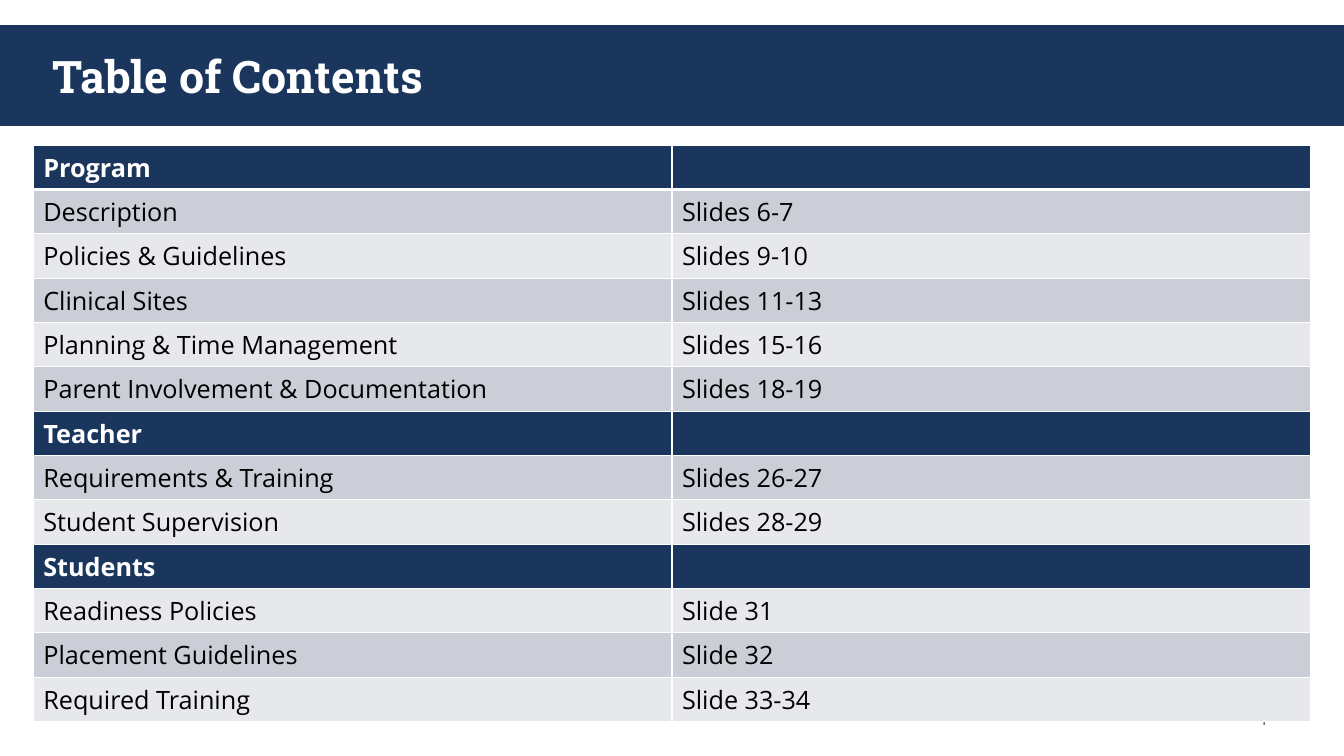
from dataclasses import dataclass
from typing import Any

import pptx
import pptx.dml.color
import pptx.enum.shapes
import pptx.enum.text
import pptx.oxml
import pptx.oxml.ns
import pptx.util

Inches = pptx.util.Inches
Align = pptx.enum.text.PP_ALIGN
Anchor = pptx.enum.text.MSO_ANCHOR


@dataclass(frozen=True)
class Theme:
    navy: str = "1B365D"
    white: str = "FFFFFF"
    black: str = "000000"
    gray: str = "6E7073"
    dark_band: str = "CBCDD7"
    light_band: str = "E7E8EC"
    heading_font: str = "Roboto Slab"
    body_font: str = "Open Sans"
    title_size: int = 32
    body_size: int = 18
    number_size: int = 14
    header_rule: int = 3


@dataclass(frozen=True)
class Frame:
    left: float
    top: float
    width: float
    height: float

    def lengths(self) -> tuple[int, ...]:
        return tuple(Inches(value) for value in (self.left, self.top, self.width, self.height))


@dataclass(frozen=True)
class TextStyle:
    name: str
    size: int
    color: str
    bold: bool = False


@dataclass(frozen=True)
class Label:
    text: str
    frame: Frame
    style: TextStyle
    align: Any = Align.LEFT
    anchor: Any = Anchor.TOP


@dataclass(frozen=True)
class Entry:
    topic: str
    slides: str = ""

    @property
    def is_section(self) -> bool:
        return not self.slides


THEME = Theme()
TITLE_STYLE = TextStyle(THEME.heading_font, THEME.title_size, THEME.white, True)
NUMBER_STYLE = TextStyle(THEME.body_font, THEME.number_size, THEME.gray)
SECTION_STYLE = TextStyle(THEME.body_font, THEME.body_size, THEME.white, True)
ENTRY_STYLE = TextStyle(THEME.body_font, THEME.body_size, THEME.black)

BANNER = Frame(0, 0.25, 13.33, 1)
LABELS = [
    Label("4", Frame(12, 6.95, 0.67, 0.4), NUMBER_STYLE, align=Align.RIGHT),
    Label("Table of Contents", Frame(0.42, 0.25, 12.11, 1), TITLE_STYLE, anchor=Anchor.MIDDLE),
]
ENTRIES = [
    Entry("Program"),
    Entry("Description", "Slides 6-7"),
    Entry("Policies & Guidelines", "Slides 9-10"),
    Entry("Clinical Sites", "Slides 11-13"),
    Entry("Planning & Time Management", "Slides 15-16"),
    Entry("Parent Involvement & Documentation", "Slides 18-19"),
    Entry("Teacher"),
    Entry("Requirements & Training", "Slides 26-27"),
    Entry("Student Supervision", "Slides 28-29"),
    Entry("Students"),
    Entry("Readiness Policies", "Slide 31"),
    Entry("Placement Guidelines", "Slide 32"),
    Entry("Required Training", "Slide 33-34"),
]
ROW_HEIGHT = 0.44
CONTENTS = Frame(0.33, 1.44, 12.67, ROW_HEIGHT * len(ENTRIES))


def rgb(value: str) -> pptx.dml.color.RGBColor:
    return pptx.dml.color.RGBColor.from_string(value)


def paint(fill: Any, color: str) -> None:
    fill.solid()
    fill.fore_color.rgb = rgb(color)


def write(para: Any, text: str, style: TextStyle) -> None:
    span = para.add_run()
    span.text = text
    formats = {"name": style.name, "size": pptx.util.Pt(style.size), "bold": style.bold}
    for attribute, value in formats.items():
        setattr(span.font, attribute, value)
    span.font.color.rgb = rgb(style.color)


def rule_below(cell: Any, color: str, points: int) -> None:
    border = pptx.oxml.parse_xml(
        f'<a:lnB {pptx.oxml.ns.nsdecls("a")} w="{pptx.util.Pt(points)}">'
        f'<a:solidFill><a:srgbClr val="{color}"/></a:solidFill></a:lnB>'
    )
    cell._tc.get_or_add_tcPr().insert(0, border)


def draw_banner(page: Any, frame: Frame) -> None:
    rectangle = pptx.enum.shapes.MSO_SHAPE.RECTANGLE
    banner = page.shapes.add_shape(rectangle, *frame.lengths())
    banner.shadow.inherit = False
    paint(banner.fill, THEME.navy)
    banner.line.fill.background()


def draw_label(page: Any, label: Label) -> None:
    box = page.shapes.add_textbox(*label.frame.lengths())
    formats = {"word_wrap": True, "vertical_anchor": label.anchor}
    for attribute, value in formats.items():
        setattr(box.text_frame, attribute, value)
    para = box.text_frame.paragraphs[0]
    para.alignment = label.align
    write(para, label.text, label.style)


def draw_contents(page: Any, frame: Frame, entries: list[Entry]) -> None:
    table = page.shapes.add_table(len(entries), 2, *frame.lengths()).table
    bands = (THEME.light_band, THEME.dark_band)
    for index, entry in enumerate(entries):
        color = THEME.navy if entry.is_section else bands[index % 2]
        style = SECTION_STYLE if entry.is_section else ENTRY_STYLE
        for cell, text in zip(table.rows[index].cells, (entry.topic, entry.slides)):
            paint(cell.fill, color)
            if text:
                write(cell.text_frame.paragraphs[0], text, style)
    for cell in table.rows[0].cells:
        rule_below(cell, THEME.white, THEME.header_rule)


def main() -> None:
    deck = pptx.Presentation()
    deck.slide_width, deck.slide_height = Inches(13.33), Inches(7.5)
    page = deck.slides.add_slide(deck.slide_layouts[6])
    draw_banner(page, BANNER)
    for label in LABELS:
        draw_label(page, label)
    draw_contents(page, CONTENTS, ENTRIES)
    deck.save("out.pptx")


if __name__ == "__main__":
    main()
